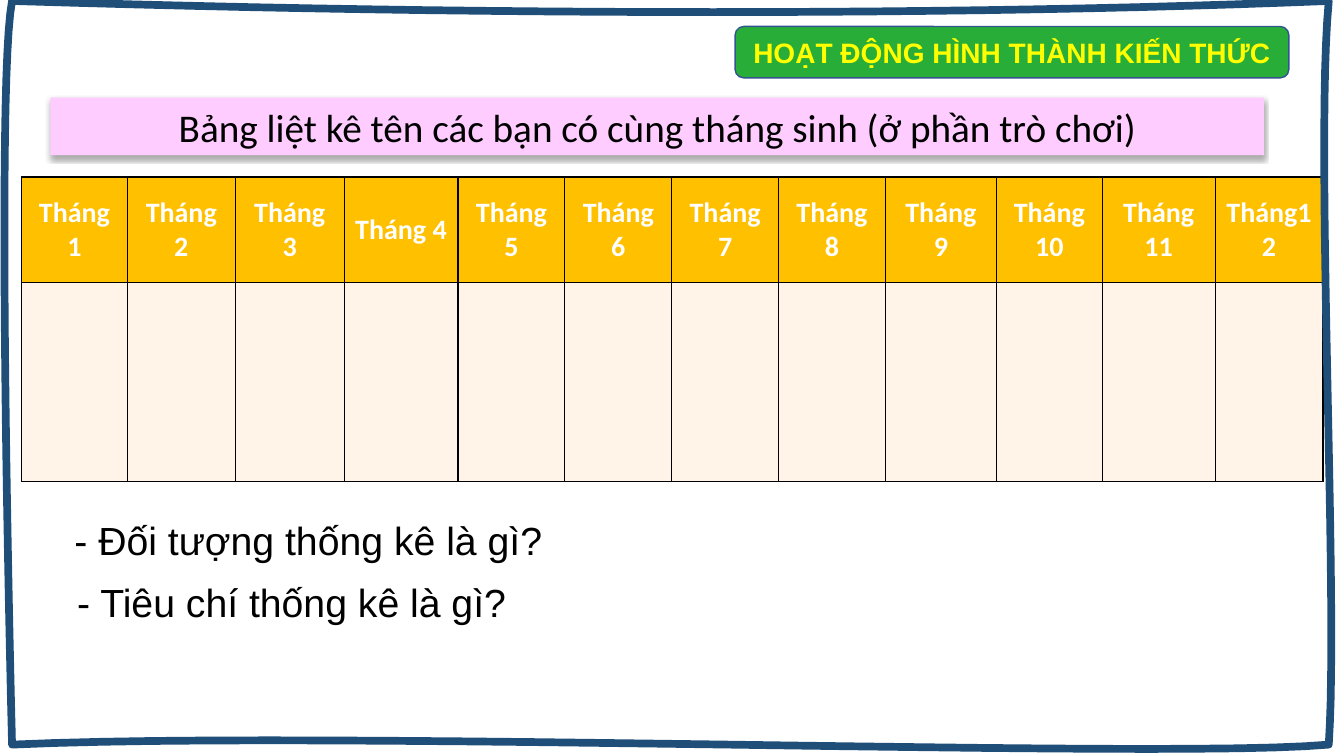
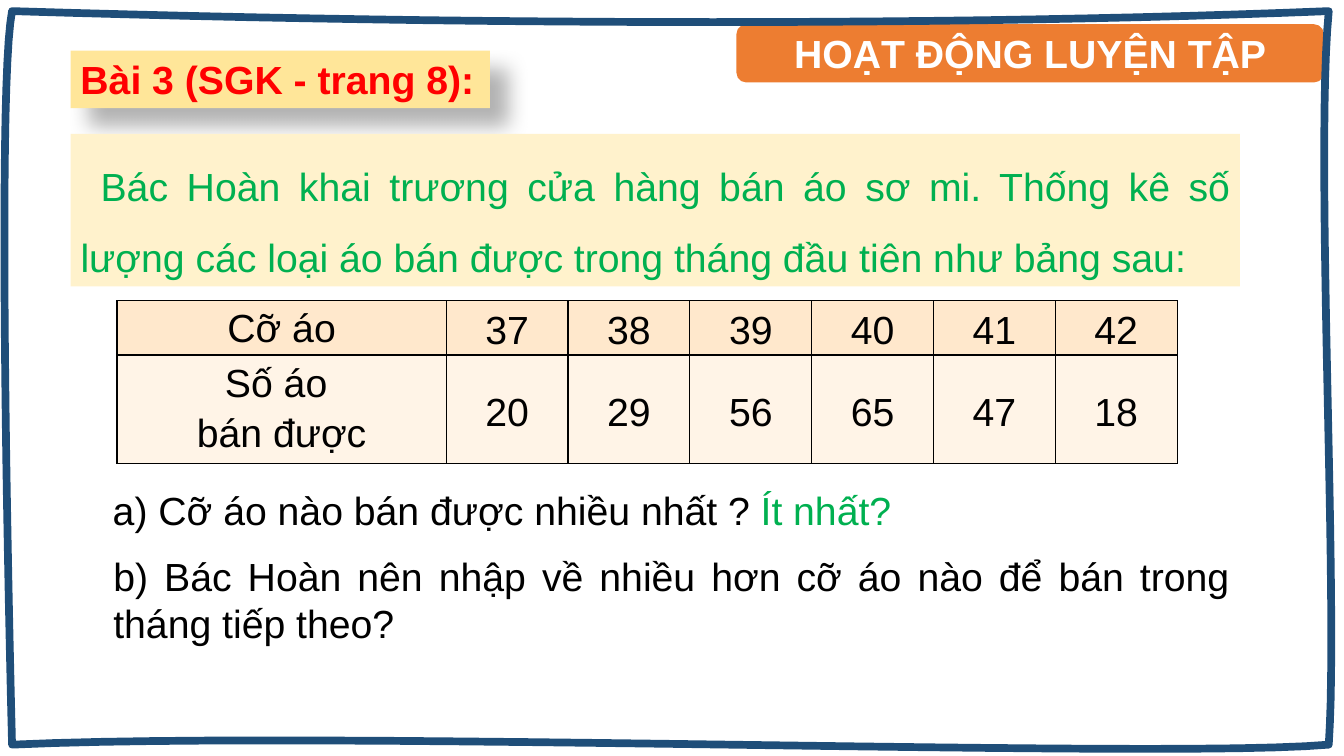
from lxml import etree
from pptx import Presentation
from pptx.dml.color import RGBColor
from pptx.enum.shapes import MSO_SHAPE
from pptx.enum.text import MSO_ANCHOR, PP_ALIGN
from pptx.oxml.ns import qn
from pptx.util import Emu, Inches, Pt

RECT, ROUND = MSO_SHAPE.RECTANGLE, MSO_SHAPE.ROUNDED_RECTANGLE
TOP, MID = MSO_ANCHOR.TOP, MSO_ANCHOR.MIDDLE
LEFT, MIDDLE, JUST = PP_ALIGN.LEFT, PP_ALIGN.CENTER, PP_ALIGN.JUSTIFY
WIDE, HIGH = Inches(13.33), Inches(7.5)

HUES = {
    "ink": "000000", "white": "FFFFFF", "navy": "1F4E79", "blue": "325491",
    "pink": "FFCCFF", "gold": "FFC000", "cream": "FFF4E7", "peach": "FFE8CC",
    "sand": "FFE699", "pale": "FFF2CC", "leaf": "28AE38", "green": "00B050",
    "lemon": "FFFF00", "rust": "ED7D31", "red": "FF0000",
}
BODY = {"name": "Arial", "size": 28, "bold": False, "hue": "ink"}
BOLD = {**BODY, "bold": True}
HEAD = {"name": "Calibri", "size": 20, "bold": True, "hue": "white"}
PLAIN = {"align": LEFT}
MID_PARA = {"align": MIDDLE}
ROW_PARA = {"align": MIDDLE, "spacing": 1.15}


def rgb(hue):
    return RGBColor.from_string(HUES[hue])


def place(left, top, wide, high):
    """Turn percent shares of the slide into lengths."""
    return [Emu(round(share * side / 100)) for share, side in
            zip((left, top, wide, high), (WIDE, HIGH, WIDE, HIGH))]


def write(body, text, font, para):
    """Fill a text body; text is a string or a list of (text, hue) runs."""
    runs = [(text, font["hue"])] if isinstance(text, str) else text
    lines = [[]]
    for words, hue in runs:
        first, *rest = words.split("\n")
        lines[-1].append((first, hue))
        lines += [[(part, hue)] for part in rest]
    for num, line in enumerate(lines):
        item = body.add_paragraph() if num else body.paragraphs[0]
        item.alignment = para["align"]
        if "spacing" in para:
            item.line_spacing = para["spacing"]
        if "indent" in para:
            item._p.get_or_add_pPr().set("indent", str(Inches(para["indent"])))
        for words, hue in line:
            run = item.add_run()
            run.text = words
            looks = {"name": font["name"], "size": Pt(font["size"]),
                     "bold": font["bold"]}
            for key, val in looks.items():
                setattr(run.font, key, val)
            run.font.color.rgb = rgb(hue)


def shade(shape, alpha, blur, dist, angle):
    """Give a shape an outer shadow."""
    group = shape._element.spPr.find(qn("a:effectLst"))
    cast = etree.SubElement(group, qn("a:outerShdw"), {
        "blurRad": str(Pt(blur)), "dist": str(Pt(dist)),
        "dir": str(angle * 60000), "algn": "tl", "rotWithShape": "0"})
    hue = etree.SubElement(cast, qn("a:srgbClr"), val=HUES["ink"])
    etree.SubElement(hue, qn("a:alpha"), val=str(alpha * 1000))


def panel(slide, box, text, font, fill, para=MID_PARA, kind=RECT, line=None,
          anchor=MID, wrap=True, shadow=None):
    shape = slide.shapes.add_shape(kind, *place(*box))
    shape.shadow.inherit = False
    shape.fill.solid()
    shape.fill.fore_color.rgb = rgb(fill)
    if line:
        shape.line.color.rgb = rgb(line)
        shape.line.width = Pt(1)
    else:
        shape.line.fill.background()
    if shadow:
        shade(shape, *shadow)
    body = shape.text_frame
    body.word_wrap, body.vertical_anchor = wrap, anchor
    write(body, text, font, para)


def note(slide, box, text, para=PLAIN):
    body = slide.shapes.add_textbox(*place(*box)).text_frame
    body.word_wrap = True
    write(body, text, BODY, para)


def edge(cell):
    """Draw thin black borders round a cell."""
    props = cell._tc.get_or_add_tcPr()
    for side in ("lnL", "lnR", "lnT", "lnB"):
        line = etree.SubElement(props, qn("a:" + side), w=str(Pt(1)))
        fill = etree.SubElement(line, qn("a:solidFill"))
        etree.SubElement(fill, qn("a:srgbClr"), val=HUES["ink"])


def grid(slide, box, cols, rows, data, fills, font, para, tight=False):
    """Draw a table; cols and rows are weights that share out the box."""
    spot = place(*box)
    table = slide.shapes.add_table(len(rows), len(cols), *spot).table
    table.horz_banding = table.first_row = False
    for col, part in zip(table.columns, cols):
        col.width = Emu(round(spot[2] * part / sum(cols)))
    for row, part in zip(table.rows, rows):
        row.height = Emu(round(spot[3] * part / sum(rows)))
    for r, line in enumerate(data):
        for c, text in enumerate(line):
            cell = table.cell(r, c)
            edge(cell)
            cell.fill.solid()
            cell.fill.fore_color.rgb = rgb(fills[r])
            cell.vertical_anchor = TOP if tight and c == 0 else MID
            if tight:
                cell.margin_left = cell.margin_right = Inches(0.07)
                cell.margin_top = cell.margin_bottom = 0
            if text:
                write(cell.text_frame, text, font, para)


def frame(slide, top):
    """Draw the hand-drawn border, from top down to the slide's foot."""
    def spot(x, y):
        return x * WIDE / 100, (top + y * (98.5 - top)) * HIGH / 100

    # Each side: two curve handles and an end; x in percent, y as a share
    sides = [
        ((36.3, 0.02), (71.94, 0.02), (98.87, 0)),
        ((97.82, 0.2), (99.62, 0.8), (98.87, 1)),
        ((86.7, 1.02), (24.6, 0.98), (0.9, 1)),
        ((0.75, 0.89), (-0.3, 0.11), (0.9, 0)),
    ]
    start, steps, dots = (0.9, 0), 24, []
    for one, two, end in sides:
        for step in range(1, steps + 1):
            t = step / steps
            u = 1 - t
            dots.append(spot(*(u**3 * a + 3*u*u*t * b + 3*u*t*t * c + t**3 * d
                               for a, b, c, d in zip(start, one, two, end))))
        start = end
    pen = slide.shapes.build_freeform(*spot(*start))
    pen.add_line_segments(dots, close=True)
    shape = pen.convert_to_shape()
    shape.shadow.inherit = False
    shape.fill.background()
    shape.line.color.rgb = rgb("navy")
    shape.line.width = Pt(5.5)


def months(slide):
    """Birth month table with two questions."""
    panel(slide, (3.75, 12.93, 90.3, 7.6),
          "Bảng liệt kê tên các bạn có cùng tháng sinh (ở phần trò chơi)",
          {**BODY, "name": "Calibri"}, "pink", shadow=(32, 3.5, 2.2, 90))
    names = [f"Tháng {num}" for num in range(1, 12)] + ["Tháng12"]
    cols = [1.05, 1.07, 1.08, 1.13, 1.06, 1.06, 1.06, 1.06, 1.1, 1.05, 1.12,
            1.07]
    grid(slide, (1.6, 23.4, 96.85, 40.3), cols, [1.05, 1.97],
         [names, [""] * len(names)], ["gold", "cream"], HEAD, MID_PARA)
    note(slide, (4.8, 67.7, 45.4, 7.6), "- Đối tượng thống kê là gì?")
    note(slide, (5, 75.9, 43.2, 7.6), "- Tiêu chí thống kê là gì?")
    panel(slide, (54.7, 3.5, 41.2, 6.8), "HOẠT ĐỘNG HÌNH THÀNH KIẾN THỨC",
          {**BOLD, "size": 20, "hue": "lemon"}, "leaf", kind=ROUND,
          line="blue")
    frame(slide, 0.13)


def shirts(slide):
    """Exercise on shirt sales."""
    panel(slide, (5.25, 6.7, 31.2, 7.6), "Bài 3 (SGK - trang 8):",
          {**BOLD, "hue": "red"}, "sand", PLAIN, anchor=TOP, wrap=False,
          shadow=(30, 15, 18, 45))
    note(slide, (7.65, 63.7, 62.6, 7.6),
         [("a) Cỡ áo nào bán được nhiều nhất ? ", "ink"),
          ("Ít nhất?", "green")])
    note(slide, (7.7, 72.4, 84.5, 13.9),
         "b) Bác Hoàn nên nhập về nhiều hơn cỡ áo nào để bán trong "
         "tháng tiếp theo?", {"align": JUST})
    data = [["Cỡ áo", "37", "38", "39", "40", "41", "42"],
            ["Số áo \nbán được", "20", "29", "56", "65", "47", "18"]]
    grid(slide, (8.7, 39.8, 78.9, 21.5), [3.27] + [1.21] * 6, [1, 2], data,
         ["peach", "cream"], BODY, ROW_PARA, tight=True)
    panel(slide, (5.25, 17.7, 87, 20.2),
          "Bác Hoàn khai trương cửa hàng bán áo sơ mi. Thống kê số "
          "lượng các loại áo bán được trong tháng đầu tiên như bảng sau:",
          {**BODY, "hue": "green"}, "pale",
          {"align": JUST, "spacing": 1.5, "indent": 0.2}, anchor=TOP)
    panel(slide, (54.8, 3.2, 43.7, 7.7), "HOẠT ĐỘNG LUYỆN TẬP",
          {**BOLD, "hue": "white"}, "rust", kind=ROUND)
    frame(slide, 1.47)


def main():
    deck = Presentation()
    deck.slide_width, deck.slide_height = WIDE, HIGH
    for fill in (months, shirts):
        fill(deck.slides.add_slide(deck.slide_layouts[6]))
    deck.save("out.pptx")


if __name__ == "__main__":
    main()
